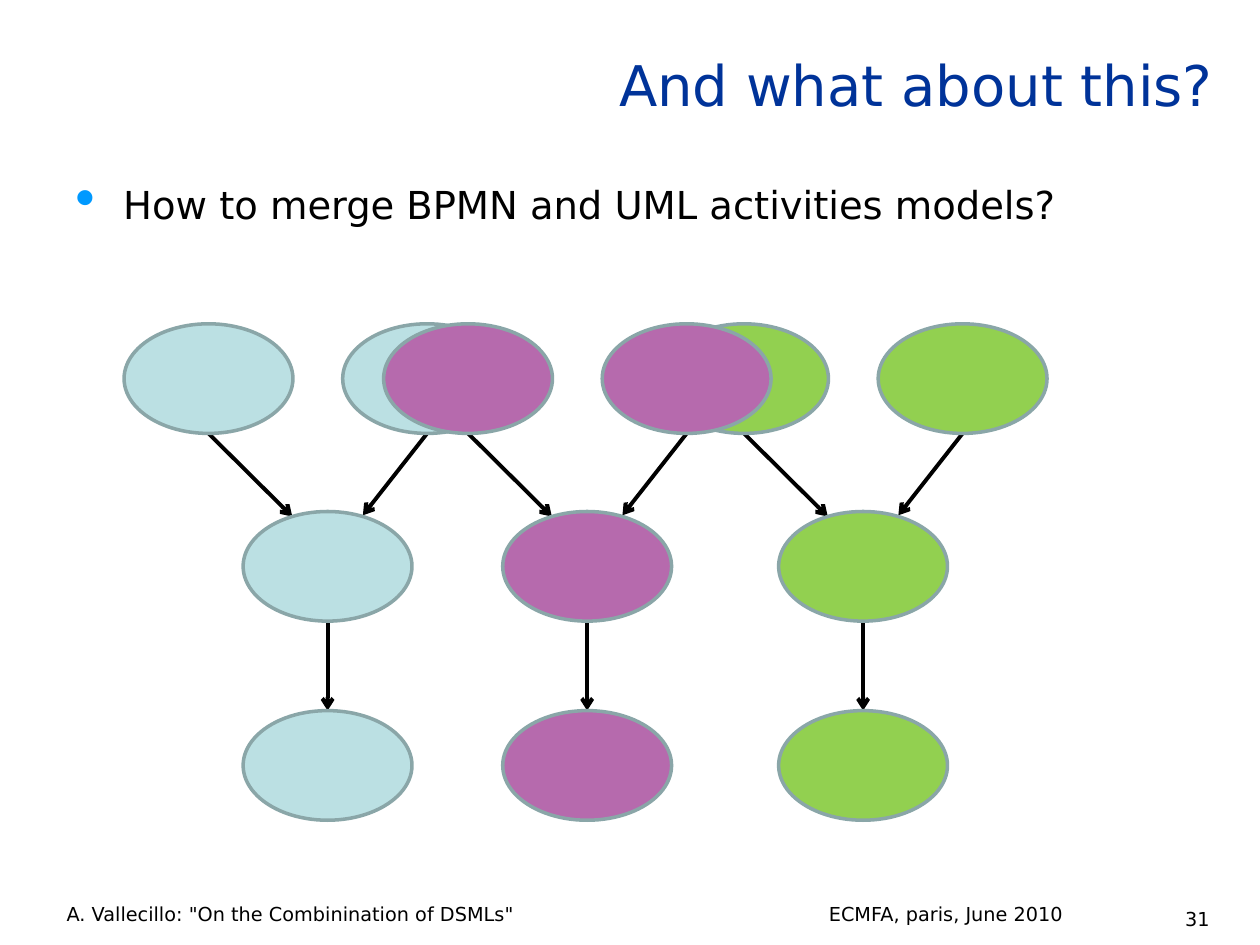
import lxml.etree
import pptx
import pptx.dml.color
import pptx.enum.shapes
import pptx.enum.text
import pptx.oxml.ns
import pptx.util

Inches = pptx.util.Inches
Pt = pptx.util.Pt
qn = pptx.oxml.ns.qn
ALIGN = pptx.enum.text.PP_ALIGN
ANCHOR = pptx.enum.text.MSO_ANCHOR


def color(hex_string):
    return pptx.dml.color.RGBColor.from_string(hex_string)


deck = pptx.Presentation()
deck.slide_width = Inches(10)
deck.slide_height = Inches(7.5)
page = deck.slides.add_slide(deck.slide_layouts[6])

# Title, body and footer texts
texts = [
    ("And what about this?", 0.2, 0.28, 9.53, 0.77, 32, "003399", ALIGN.RIGHT, ANCHOR.MIDDLE),
    ("How to merge BPMN and UML activities models?", 0.5, 1.39, 9.3, 5.51, 22, "000000", ALIGN.LEFT, ANCHOR.TOP),
    ("ECMFA, paris, June 2010", 6.48, 7.11, 2.06, 0.26, 11, "000000", ALIGN.LEFT, ANCHOR.TOP),
    ('A. Vallecillo: "On the Combinination of DSMLs"', 0.43, 7.11, 5.9, 0.32, 11, "000000", ALIGN.LEFT, ANCHOR.TOP),
    ("31", 8.86, 7.15, 0.84, 0.28, 11, "000000", ALIGN.RIGHT, ANCHOR.TOP),
]
for wording, left, top, width, height, size, ink, align, anchor in texts:
    box = page.shapes.add_textbox(Inches(left), Inches(top), Inches(width), Inches(height))
    frame = box.text_frame
    frame.word_wrap = True
    frame.vertical_anchor = anchor
    frame.text = wording
    para = frame.paragraphs[0]
    para.alignment = align
    if size == 22:
        properties = para._p.get_or_add_pPr()
        properties.set("marL", str(Inches(0.38)))
        properties.set("indent", str(-Inches(0.38)))
        bullet_color = lxml.etree.SubElement(properties, qn("a:buClr"))
        lxml.etree.SubElement(bullet_color, qn("a:srgbClr"), val="0099FF")
        lxml.etree.SubElement(properties, qn("a:buSzPct"), val="150000")
        lxml.etree.SubElement(properties, qn("a:buChar"), char="•")
    span = para.runs[0]
    span.font.name = "DejaVu Sans"
    span.font.size = Pt(size)
    span.font.color.rgb = color(ink)

# Three activity graphs: two start nodes lead to a middle node, then to an end node
node_width, node_height = 1.34, 0.87
start_top, middle_top, end_top = 2.57, 4.06, 5.64
start_bottom = start_top + node_height
graphs = [(2.6, "BBE0E3"), (6.85, "92D050"), (4.66, "B66AAD")]

for center, fill in graphs:
    group = page.shapes.add_group_shape()
    first_center, second_center = center - 0.945, center + 0.79

    arrows = [
        (center, middle_top + node_height, center, end_top),
        (first_center, start_bottom, center - 0.28, 4.1),
        (second_center, start_bottom, center + 0.28, 4.09),
    ]
    for from_x, from_y, to_x, to_y in arrows:
        arrow = group.shapes.add_connector(
            pptx.enum.shapes.MSO_CONNECTOR.STRAIGHT,
            Inches(from_x), Inches(from_y), Inches(to_x), Inches(to_y))
        arrow.line.color.rgb = color("000000")
        arrow.line.width = Pt(2.25)
        lxml.etree.SubElement(arrow.line._get_or_add_ln(), qn("a:tailEnd"), type="arrow")
        lxml.etree.SubElement(arrow._element.spPr, qn("a:effectLst"))

    nodes = [(center, middle_top), (center, end_top),
             (first_center, start_top), (second_center, start_top)]
    for node_center, top in nodes:
        node = group.shapes.add_shape(
            pptx.enum.shapes.MSO_SHAPE.OVAL,
            Inches(node_center - node_width / 2), Inches(top),
            Inches(node_width), Inches(node_height))
        node.shadow.inherit = False
        node.fill.solid()
        node.fill.fore_color.rgb = color(fill)
        node.line.color.rgb = color("8AA6A8")
        node.line.width = Pt(2)

deck.save("out.pptx")
